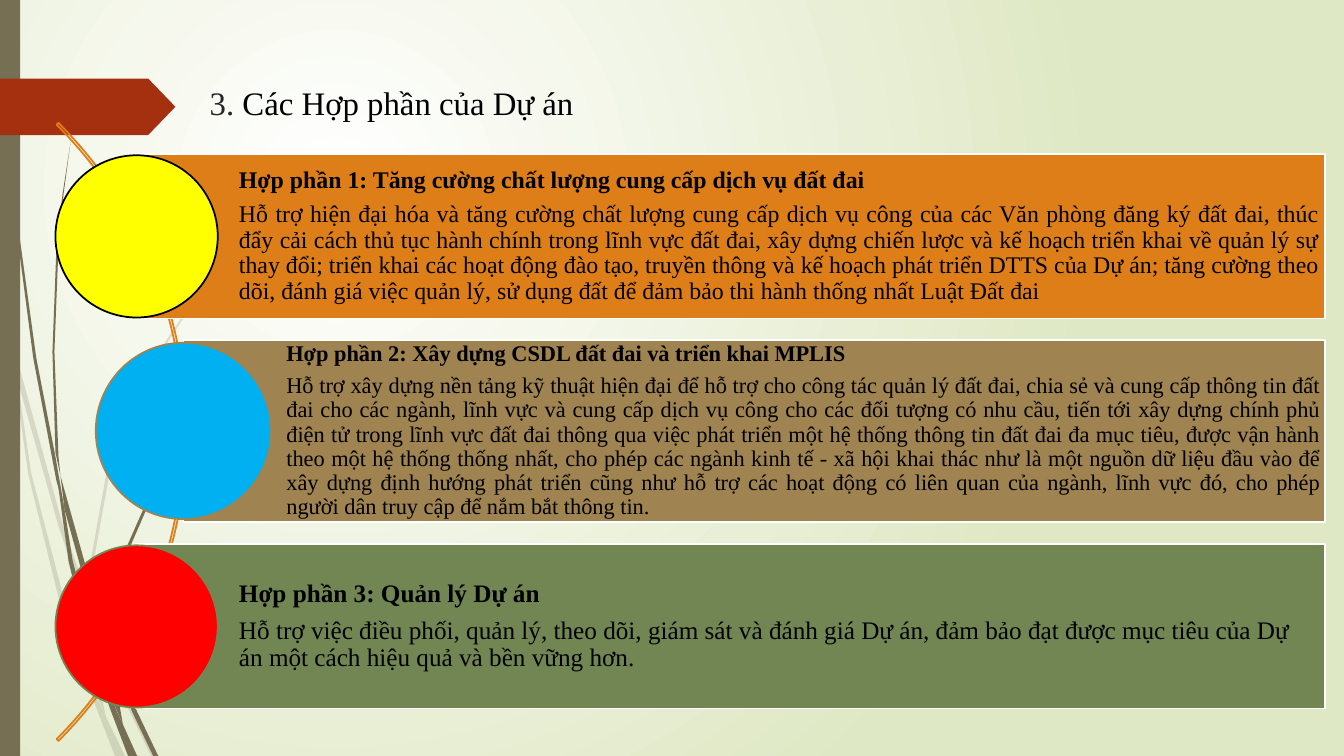
from lxml import etree
from pptx import Presentation, util as u
from pptx.dml.color import RGBColor
from pptx.enum import shapes, text
from pptx.oxml.ns import qn

COLORS = {
    "white": "FFFFFF", "black": "000000", "ink": "262626", "mist": "DFE8C4",
    "stem": "766F54", "rust": "A53010", "orange": "DE7E18", "tan": "9F8351",
    "green": "728653", "yellow": "FFFF00", "blue": "00B0F0", "red": "FF0000",
}

PALE_WISPS = [
    [(.11, 3.5), (.09, 3.22), (0, 2.82), (0, 2.99), (.1, 3.44)],
    [(.58, 5.22), (.84, 5.99), (.85, 5.86), (.62, 5.2), (.14, 3.45), (.17, 3.76)],
    [(.92, 6.07), (.88, 5.96), (.88, 6.1), (1.23, 6.94), (1.5, 7.5), (1.55, 7.5),
     (1.27, 6.92)],
    [(.93, 6.83), (.7, 6.19), (.31, 4.69), (.17, 3.76), (.11, 3.5), (.28, 4.7),
     (.65, 6.21), (.92, 6.93), (1.14, 7.5), (1.24, 7.5), (1.05, 7.11), (.96, 6.92)],
    [(.84, 5.99), (.87, 6.46), (.93, 6.83), (1.05, 7.11), (.91, 6.46), (.88, 6.1)],
    [(.88, 5.84), (1.1, 4.62), (1.6, 3.49), (2.29, 2.45), (2.68, 1.98), (3.12, 1.54),
     (2.68, 1.97), (2.28, 2.44), (1.58, 3.48), (1.07, 4.61), (.85, 5.84), (.84, 5.99),
     (.88, 6.08)],
]
DARK_WISPS = [
    [(.07, 1.1), (.17, 2.33), (.33, 3.55), (.56, 4.77), (.64, 5.05), (.55, 4.53),
     (.36, 3.55), (.19, 2.32), (.08, 1.09), (.04, 0), (.03, 0), (.04, .48)],
    [(.88, 5.92), (1.06, 6.45), (1.06, 6.31), (.93, 5.9), (.6, 4.72), (.64, 5.05)],
    [(1.13, 6.49), (1.1, 6.41), (1.11, 6.56), (1.32, 7.08), (1.52, 7.5), (1.57, 7.5),
     (1.36, 7.06)],
    [(1.1, 6.91), (.98, 6.57), (.72, 5.56), (.64, 5.05), (.57, 4.77), (.68, 5.57),
     (.93, 6.59), (1.11, 7.08), (1.27, 7.5), (1.36, 7.5), (1.22, 7.19), (1.16, 7.06)],
    [(.6, 4.72), (.58, 4.53), (.54, 3.49), (.58, 2.45), (.63, 1.93), (.7, 1.41),
     (.62, 1.93), (.56, 2.45), (.52, 3.49), (.55, 4.49)],
    [(1.11, 6.33), (1.25, 5.52), (1.58, 4.76), (2.05, 4.06), (2.31, 3.74), (2.6, 3.44),
     (2.31, 3.73), (2.04, 4.05), (1.56, 4.74), (1.22, 5.51), (1.06, 6.31), (1.1, 6.41)],
    [(1.06, 6.45), (1.1, 6.91), (1.22, 7.19), (1.11, 6.56)],
]
ARROW = [(0, .78), (1.47, .78), (1.74, 1.06), (1.47, 1.34), (0, 1.34)]

JUSTIFY, LEFT = text.PP_ALIGN.JUSTIFY, text.PP_ALIGN.LEFT
COMPONENTS = [
    dict(bar=(1.35, 1.53, 11.79, 1.63), fill="orange", inset=.05, size=17,
         circle=(.55, 1.54, 1.61, 1.61), disc="yellow", rim="black",
         lines=[
             ("Hợp phần 1: Tăng cường chất lượng cung cấp dịch vụ đất đai", JUSTIFY),
             ("Hỗ trợ hiện đại hóa và tăng cường chất lượng cung cấp dịch vụ công của các "
              "Văn phòng đăng ký đất đai, thúc đẩy cải cách thủ tục hành chính trong lĩnh "
              "vực đất đai, xây dựng chiến lược và kế hoạch triển khai về quản lý sự thay "
              "đổi; triển khai các hoạt động đào tạo, truyền thông và kế hoạch phát triển "
              "DTTS của Dự án; tăng cường theo dõi, đánh giá việc quản lý, sử dụng đất để "
              "đảm bảo thi hành thống nhất Luật Đất đai", JUSTIFY)]),
    dict(bar=(1.82, 3.37, 11.32, 1.81), fill="tan", inset=.04, size=16,
         circle=(.95, 3.4, 1.74, 1.75), disc="blue", rim="tan",
         lines=[
             ("Hợp phần 2: Xây dựng CSDL đất đai và triển khai MPLIS", LEFT),
             ("Hỗ trợ xây dựng nền tảng kỹ thuật hiện đại để hỗ trợ cho công tác quản lý "
              "đất đai, chia sẻ và cung cấp thông tin đất đai cho các ngành, lĩnh vực và "
              "cung cấp dịch vụ công cho các đối tượng có nhu cầu, tiến tới xây dựng chính "
              "phủ điện tử trong lĩnh vực đất đai thông qua việc phát triển một hệ thống "
              "thông tin đất đai đa mục tiêu, được vận hành theo một hệ thống thống nhất, "
              "cho phép các ngành kinh tế - xã hội khai thác như là một nguồn dữ liệu đầu "
              "vào để xây dựng định hướng phát triển cũng như hỗ trợ các hoạt động có liên "
              "quan của ngành, lĩnh vực đó, cho phép người dân truy cập để nắm bắt thông "
              "tin.", JUSTIFY)]),
    dict(bar=(1.35, 5.4, 11.79, 1.63), fill="green", inset=.05, size=18,
         circle=(.55, 5.41, 1.61, 1.61), disc="red", rim="green",
         lines=[
             ("Hợp phần 3: Quản lý Dự án", LEFT),
             ("Hỗ trợ việc điều phối, quản lý, theo dõi, giám sát và đánh giá Dự án, đảm "
              "bảo đạt được mục tiêu của Dự án một cách hiệu quả và bền vững hơn.", LEFT)]),
]


class Deck:
    """Holds the style and the current slide, and draws each kind of element."""

    font = "Times New Roman"
    line_width = u.Pt(1.25)

    def __init__(self):
        self.prs = Presentation()
        self.prs.slide_width, self.prs.slide_height = u.Inches(13.33), u.Inches(7.5)
        self.s = self.prs.slides.add_slide(self.prs.slide_layouts[5])

    def color(self, name):
        return RGBColor.from_string(COLORS[name])

    def background(self, center, edge):
        fill = self.s.background.fill
        fill.gradient()
        for stop, name in zip(fill.gradient_stops, (center, edge)):
            stop.color.rgb = self.color(name)
        grad = self.s.element.find(".//" + qn("a:gradFill"))
        grad.remove(grad.find(qn("a:lin")))
        radial = etree.SubElement(grad, qn("a:path"), path="circle")
        etree.SubElement(radial, qn("a:fillToRect"),
                         l="50000", t="50000", r="100000", b="100000")

    def paint(self, sp, fill=None, line=None):
        sp.shadow.inherit = False
        if fill:
            sp.fill.solid()
            sp.fill.fore_color.rgb = self.color(fill)
        else:
            sp.fill.background()
        if line:
            sp.line.color.rgb = self.color(line)
            sp.line.width = self.line_width
        else:
            sp.line.fill.background()
        return sp

    def shape(self, kind, box, fill=None, line=None):
        sp = self.s.shapes.add_shape(kind, *map(u.Inches, box))
        return self.paint(sp, fill, line)

    def outline(self, points, fill, alpha=100):
        start, *rest = [(u.Inches(x), u.Inches(y)) for x, y in points]
        builder = self.s.shapes.build_freeform(*start)
        builder.add_line_segments(rest)
        sp = self.paint(builder.convert_to_shape(), fill)
        if alpha < 100:
            rgb = sp.element.spPr.find(".//" + qn("a:srgbClr"))
            etree.SubElement(rgb, qn("a:alpha"), val=str(alpha * 1000))

    def title(self, box, runs, size):
        sp = self.s.shapes.title
        sp.left, sp.top, sp.width, sp.height = map(u.Inches, box)
        tf = sp.text_frame
        tf.auto_size = text.MSO_AUTO_SIZE.NONE
        tf.vertical_anchor = text.MSO_ANCHOR.TOP
        p = tf.paragraphs[0]
        p.alignment = LEFT
        p.font.name, p.font.size = self.font, u.Pt(size)
        for words, name in runs:
            r = p.add_run()
            r.text = words
            r.font.color.rgb = self.color(name)

    def component(self, bar, fill, inset, size, circle, disc, rim, lines):
        tf = self.shape(shapes.MSO_SHAPE.RECTANGLE, bar, fill, "white").text_frame
        tf.word_wrap = True
        tf.vertical_anchor = text.MSO_ANCHOR.MIDDLE
        tf.margin_left = u.Inches(1.02)
        tf.margin_top = tf.margin_right = tf.margin_bottom = u.Inches(inset)
        for i, (words, alignment) in enumerate(lines):
            p = tf.add_paragraph() if i else tf.paragraphs[0]
            p.text, p.alignment, p.line_spacing = words, alignment, .9
            p.space_after = u.Pt(0)
            after = p._p.pPr.find(qn("a:spcAft"))
            after.remove(after[0])
            etree.SubElement(after, qn("a:spcPct"), val="35000")
            p.font.name, p.font.size, p.font.bold = self.font, u.Pt(size), i == 0
            p.font.color.rgb = self.color("black")
        self.shape(shapes.MSO_SHAPE.OVAL, circle, disc, rim)


def main():
    deck = Deck()
    deck.background("white", "mist")
    for wisp in PALE_WISPS:
        deck.outline(wisp, "stem", 20)
    for wisp in DARK_WISPS:
        deck.outline(wisp, "stem")
    deck.shape(shapes.MSO_SHAPE.RECTANGLE, (0, 0, .2, 7.5), "stem")
    deck.outline(ARROW, "rust")
    arc = deck.shape(shapes.MSO_SHAPE.BLOCK_ARC, (-6.82, -.05, 8.67, 8.67), line="orange")
    for i, value in enumerate((189, 27, .003)):
        arc.adjustments[i] = value
    for component in COMPONENTS:
        deck.component(**component)
    deck.title((1.98, .77, 10.11, .57),
               [("3. ", "ink"), ("Các Hợp phần của Dự án", "black")], 23.4)
    deck.prs.save("out.pptx")


if __name__ == "__main__":
    main()
